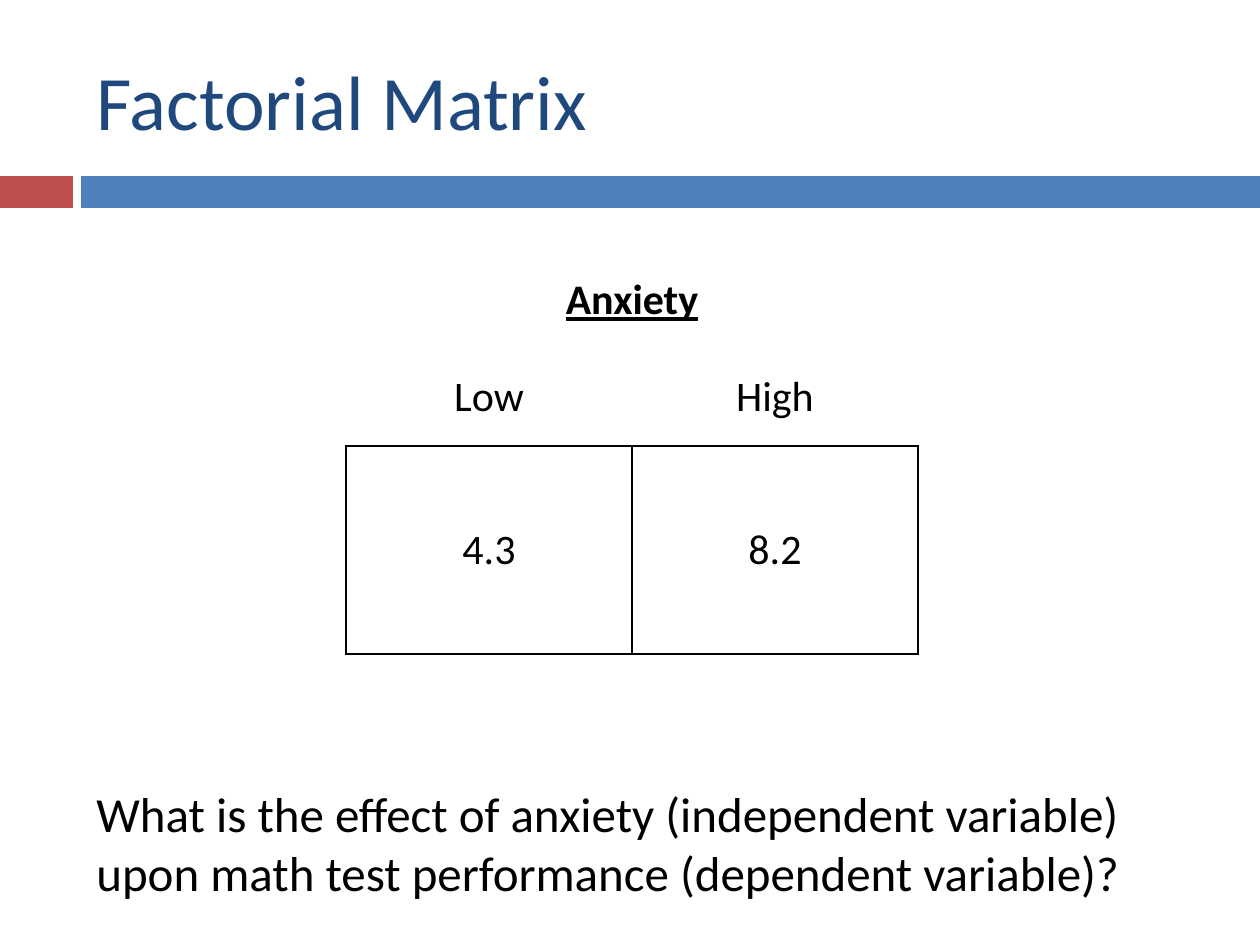
from lxml.etree import SubElement
from pptx import Presentation
from pptx.dml.color import RGBColor
from pptx.enum.shapes import MSO_SHAPE as Shape
from pptx.enum.text import MSO_ANCHOR as Anchor, PP_ALIGN as Align
from pptx.oxml.ns import qn
from pptx.util import Pt

PX = 914400 / 126
FONT = "Calibri"
NAVY = RGBColor(0x1F, 0x49, 0x7D)
BLUE = RGBColor(0x4F, 0x81, 0xBD)
RED = RGBColor(0xC0, 0x50, 0x4D)
BLACK = RGBColor(0, 0, 0)
PLAIN_TABLE_STYLE = "{2D5ABB26-0587-4C30-8999-92F81FD0307C}"


def px(*lengths):
    return [round(length * PX) for length in lengths]


def add_span(para, text, size, color=BLACK, heading=False):
    span = para.add_run()
    span.text = text
    span.font.name = FONT
    span.font.size = Pt(size)
    span.font.color.rgb = color
    span.font.bold = heading
    span.font.underline = heading


def add_title(page, box, text):
    title = page.shapes.title
    title.left, title.top, title.width, title.height = px(*box)
    title.text_frame.vertical_anchor = Anchor.MIDDLE
    para = title.text_frame.paragraphs[0]
    para.alignment = Align.LEFT
    add_span(para, text, 44, NAVY)


def add_band(page, box, accent_width, gap):
    """Draw a short red bar and, after a gap, a long blue one."""
    left, top, width, height = box
    offset = accent_width + gap
    bars = [(left, accent_width, RED), (left + offset, width - offset, BLUE)]
    for bar_left, bar_width, color in bars:
        bar = page.shapes.add_shape(
            Shape.RECTANGLE, *px(bar_left, top, bar_width, height))
        bar.shadow.inherit = False
        bar.fill.solid()
        bar.fill.fore_color.rgb = color
        bar.line.fill.background()


def outline_cell(cell):
    properties = cell._tc.get_or_add_tcPr()
    for side in ("a:lnL", "a:lnR", "a:lnT", "a:lnB"):
        line = SubElement(properties, qn(side), w=str(Pt(1)))
        fill = SubElement(line, qn("a:solidFill"))
        SubElement(fill, qn("a:srgbClr"), val=str(BLACK))


def fill_cell(cell, text, heading=False, outlined=False):
    if outlined:
        outline_cell(cell)
    cell.fill.background()
    cell.vertical_anchor = Anchor.MIDDLE
    para = cell.text_frame.paragraphs[0]
    para.alignment = Align.CENTER
    add_span(para, text, 24, heading=heading)


def add_matrix(page, box, factor, levels, scores, header_height):
    left, top, width, height = box
    columns = len(levels)
    frame = page.shapes.add_table(3, columns, *px(left, top, width, height))
    table = frame.table
    table.first_row = table.horz_banding = False
    table._tbl.tblPr.find(qn("a:tableStyleId")).text = PLAIN_TABLE_STYLE
    row_heights = px(header_height, header_height, height - 2 * header_height)
    for row, row_height in zip(table.rows, row_heights):
        row.height = row_height

    table.cell(0, 0).merge(table.cell(0, columns - 1))
    fill_cell(table.cell(0, 0), factor, heading=True)
    for column, (level, score) in enumerate(zip(levels, scores)):
        fill_cell(table.cell(1, column), level)
        fill_cell(table.cell(2, column), score, outlined=True)


def add_question(page, box, lines):
    frame = page.shapes.add_textbox(*px(*box)).text_frame
    frame.word_wrap = False
    para = frame.paragraphs[0]
    for index, line in enumerate(lines):
        if index:
            para.add_line_break()
        add_span(para, line, 28)


def main():
    deck = Presentation()
    deck.slide_width, deck.slide_height = px(1260, 945)
    page = deck.slides.add_slide(deck.slide_layouts.get_by_name("Title Only"))
    add_band(page, (0, 176, 1260, 32), accent_width=73, gap=8)
    add_title(page, (84, 32, 1124, 136), "Factorial Matrix")
    add_matrix(page, (346, 252, 572, 402), "Anxiety",
               ["Low", "High"], ["4.3", "8.2"], header_height=97)
    add_question(page, (84, 777, 1079, 131), [
        "What is the effect of anxiety (independent variable) ",
        "upon math test performance (dependent variable)?"])
    deck.save("out.pptx")


if __name__ == "__main__":
    main()
